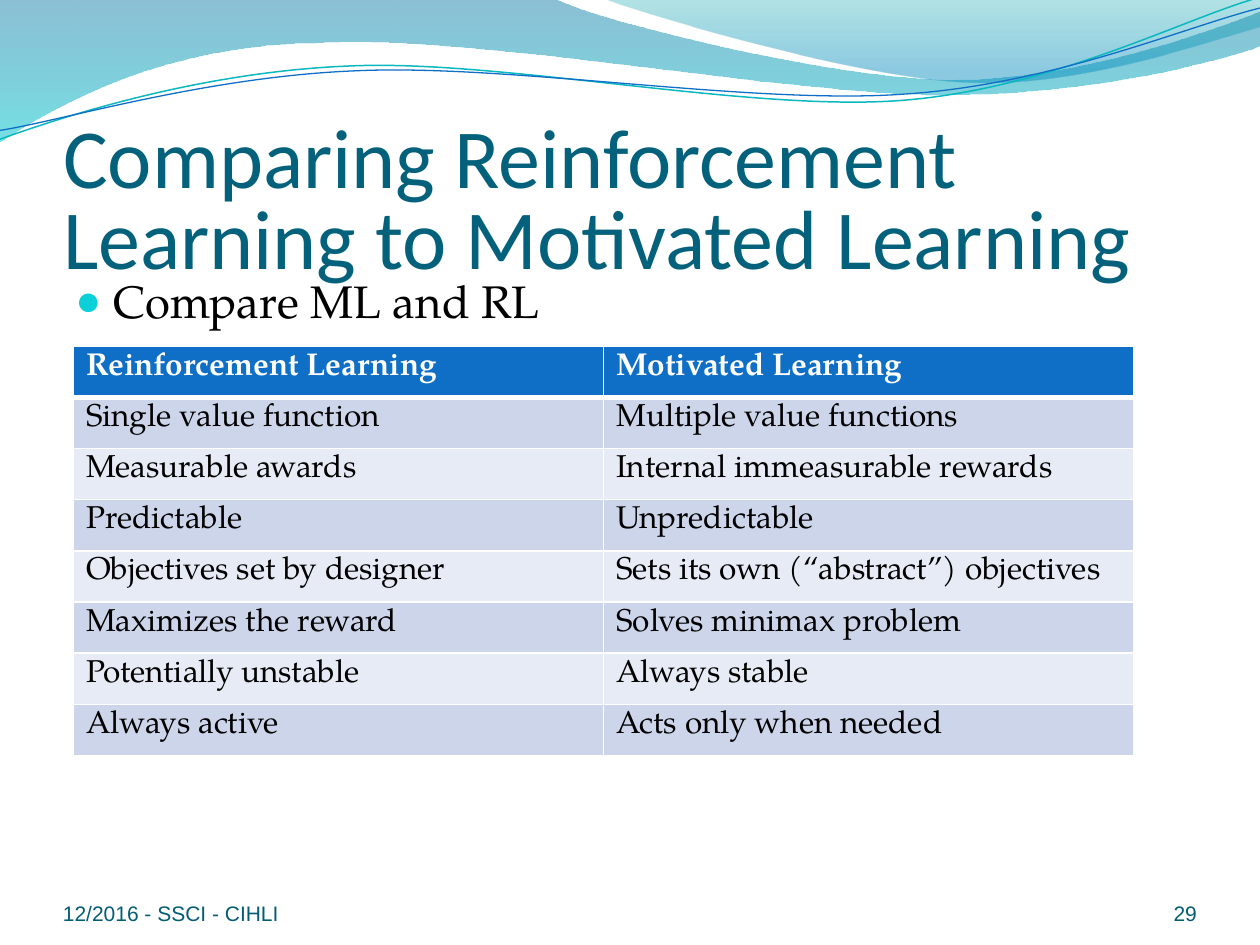
from lxml import etree
from pptx import Presentation
from pptx.dml.color import RGBColor
from pptx.enum.text import MSO_ANCHOR, MSO_AUTO_SIZE, PP_ALIGN
from pptx.oxml.ns import qn
from pptx.util import Cm, Pt

TOP, BOTTOM = MSO_ANCHOR.TOP, MSO_ANCHOR.BOTTOM
LEFT, RIGHT = PP_ALIGN.LEFT, PP_ALIGN.RIGHT
FIXED = MSO_AUTO_SIZE.NONE
INCH = 2.54
SERIF = "TeX Gyre Pagella"


def tint(code):
    return RGBColor.from_string(code)


def write(frame, text, face, code, align=LEFT):
    para = frame.paragraphs[0]
    para.alignment = align
    para.space_before = Pt(0)
    run = para.add_run()
    run.text = text
    for key, val in face.items():
        setattr(run.font, key, val)
    run.font.color.rgb = tint(code)
    return para


deck = Presentation()
deck.slide_width, deck.slide_height = Cm(25.4), Cm(19.05)
slide = deck.slides.add_slide(deck.slide_layouts[1])
shapes = slide.shapes

waves = [
    ([(0, -0.01), (4.4, -0.01), (4.76, 0.17, 6.64, 0.63, 7.58, 0.63),
      (8.53, 0.63, 9.58, 0.26, 10, 0.09), (10.01, 0.36),
      (9.83, 0.44, 8.7, 0.76, 7.46, 0.75), (6.22, 0.75, 3.82, 0.28, 2.57, 0.34),
      (1.29, 0.35, 0.46, 0.83, -0.01, 1.13), (0, -0.01)],
     [(0, "0074A1", 45), (1, "00C6CF", 55)], None),
    ([(4.79, -0.01), (5.09, 0.11, 6.82, 0.62, 7.69, 0.65),
      (8.56, 0.69, 9.61, 0.32, 10, 0.21), (10, 0), (4.79, -0.01)],
     [(0, "00A1A9", 30), (0.8, "008BBF", 45)], None),
    ([(-0.02, 0.87), (0.47, 0.72, 1.58, 0.41, 2.78, 0.42),
      (3.96, 0.42, 5.91, 0.93, 7.12, 0.9), (8.32, 0.87, 9.4, 0.36, 10, 0.22)],
     None, ("0AB8BF", 0.85)),
    ([(-0.02, 0.8), (0.46, 0.75, 1.64, 0.45, 2.83, 0.46),
      (4.03, 0.46, 5.96, 0.88, 7.16, 0.85), (8.35, 0.83, 9.42, 0.42, 10.02, 0.3)],
     None, ("0F6FC6", 0.75)),
]
for rank, (legs, stops, pen) in enumerate(waves):
    dots = [(Cm(leg[i] * INCH), Cm(leg[i + 1] * INCH))
            for leg in legs for i in range(0, len(leg), 2)]
    form = shapes.build_freeform(*dots[0])
    form.add_line_segments(dots[1:], close=bool(stops))
    wave = form.convert_to_shape()
    lines = iter(list(wave._element.iter(qn("a:lnTo"))))
    for leg in legs[1:]:
        line = next(lines)
        if len(leg) == 6:
            curve = etree.Element(qn("a:cubicBezTo"))
            line.addprevious(curve)
            for part in (line, next(lines), next(lines)):
                curve.append(part[0])
                part.getparent().remove(part)
    wave.shadow.inherit = False
    if stops:
        wave.line.fill.background()
        wave.fill.gradient()
        wave.fill.gradient_angle = 270
        for stop, (place, code, _) in zip(wave.fill.gradient_stops, stops):
            stop.position = place
            stop.color.rgb = tint(code)
        for node, (_, _, clear) in zip(wave._element.spPr.iter(qn("a:srgbClr")), stops):
            etree.SubElement(node, qn("a:alpha"), val=str(clear * 1000))
    else:
        wave.rotation = 357.3
        wave.fill.background()
        wave.line.color.rgb = tint(pen[0])
        wave.line.width = Pt(pen[1])
    shapes._spTree.insert(2 + rank, wave._element)

title, body = shapes.title, slide.placeholders[1]
date = shapes.add_textbox(0, 0, 0, 0)
page = shapes.add_textbox(0, 0, 0, 0)
boxes = [
    (title, (1.27, 2.59, 22.86, 3.17), BOTTOM, (0, 0.13, 0, 0)),
    (body, (1.27, 5.38, 22.86, 12.19), TOP, (0.25, 0.13, 0.25, 0.13)),
    (date, (1.27, 17.65, 5.92, 1.02), BOTTOM, (0, 0, 0, 0)),
    (page, (22.02, 17.65, 2.11, 1.02), BOTTOM, (0, 0, 0, 0)),
]
for box, place, anchor, pads in boxes:
    for key, val in zip(("left", "top", "width", "height"), place):
        setattr(box, key, Cm(val))
    frame = box.text_frame
    look = {"word_wrap": True, "auto_size": FIXED, "vertical_anchor": anchor}
    for key, val in look.items():
        setattr(frame, key, val)
    for side, pad in zip(("left", "top", "right", "bottom"), pads):
        setattr(frame, "margin_" + side, Cm(pad))

head = write(title.text_frame, "Comparing Reinforcement Learning to Motivated Learning",
             {"name": "Calibri", "size": Pt(48)}, "04617B")
head.line_spacing = 0.8

item = write(body.text_frame, "Compare ML and RL", {"name": SERIF, "size": Pt(26)}, "000000")
props = item._p.get_or_add_pPr()
props.set("marL", str(Cm(0.76)))
props.set("indent", str(Cm(-0.76)))
hue = etree.SubElement(props, qn("a:buClr"))
etree.SubElement(hue, qn("a:srgbClr"), val="0BD0D9")
etree.SubElement(props, qn("a:buSzPct"), val="95000")
etree.SubElement(props, qn("a:buFont"), typeface="Arial")
etree.SubElement(props, qn("a:buChar"), char="●")

small = {"name": "Arial", "size": Pt(12)}
write(date.text_frame, "12/2016 - SSCI - CIHLI", small, "045C75")
write(page.text_frame, "29", small, "045C75", RIGHT)

rows = [
    ("Reinforcement Learning", "Motivated Learning"),
    ("Single value function", "Multiple value functions"),
    ("Measurable awards", "Internal immeasurable rewards"),
    ("Predictable", "Unpredictable"),
    ("Objectives set by designer", "Sets its own (“abstract”) objectives"),
    ("Maximizes the reward", "Solves minimax problem"),
    ("Potentially unstable", "Always stable"),
    ("Always active", "Acts only when needed"),
]
grid = shapes.add_table(len(rows), 2, Cm(1.48), Cm(6.98), Cm(21.38), Cm(8.25)).table
for r, row in enumerate(rows):
    first = r == 0
    shade = "0F6FC6" if first else ("E7EBF5", "CCD5EA")[r % 2]
    for c, text in enumerate(row):
        cell = grid.cell(r, c)
        cell.fill.solid()
        cell.fill.fore_color.rgb = tint(shade)
        write(cell.text_frame, text, {"name": SERIF, "size": Pt(18), "bold": first},
              "FFFFFF" if first else "000000")
        edges = {"L": 1, "R": 1, "T": 3 if r == 1 else 1, "B": 3 if first else 1}
        for spot, (side, width) in enumerate(edges.items()):
            edge = etree.Element(qn("a:ln" + side), w=str(Pt(width)))
            fill = etree.SubElement(edge, qn("a:solidFill"))
            etree.SubElement(fill, qn("a:srgbClr"), val="FFFFFF")
            cell._tc.get_or_add_tcPr().insert(spot, edge)

deck.save("out.pptx")
